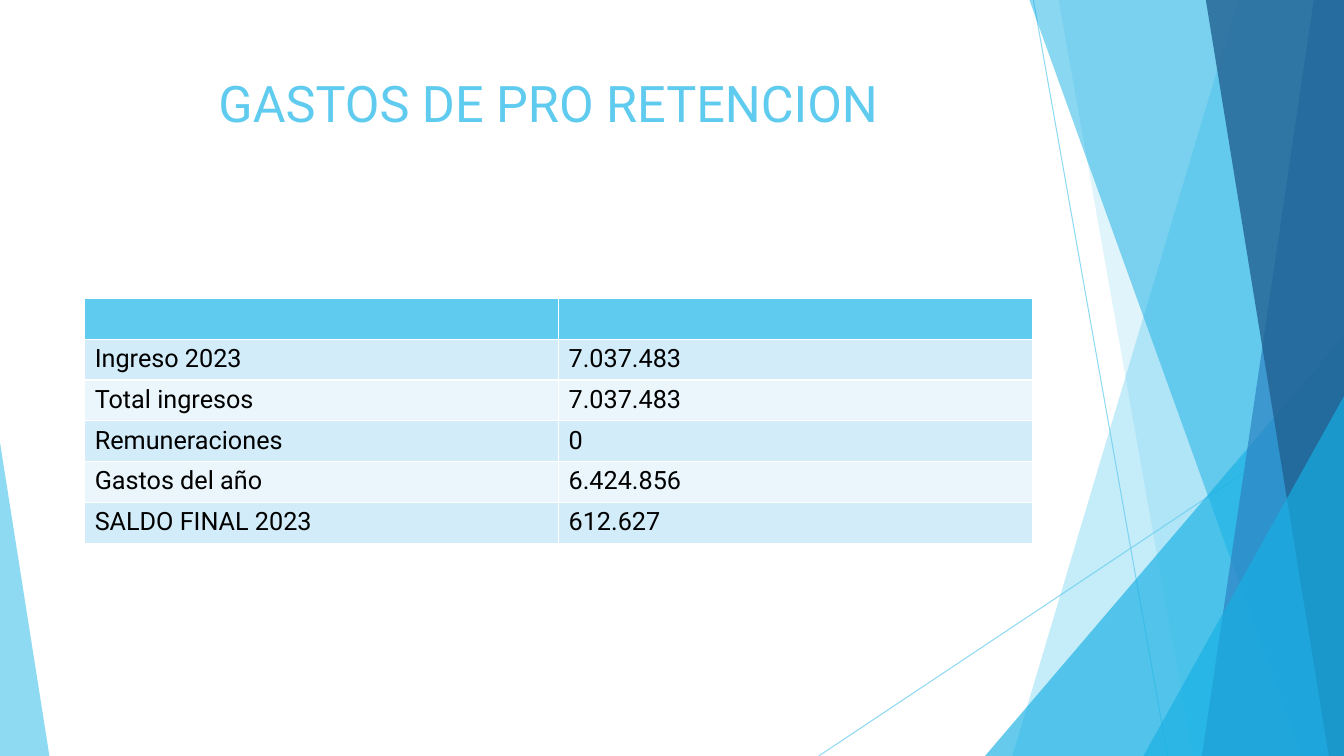
from dataclasses import dataclass

from lxml import etree
from pptx import Presentation
from pptx import util as u
from pptx.dml.color import RGBColor
from pptx.enum import shapes, text
from pptx.oxml.ns import qn

TITLE = "GASTOS DE PRO RETENCION"
ROWS = [
    ("", ""),
    ("Ingreso 2023", "7.037.483"),
    ("Total ingresos", "7.037.483"),
    ("Remuneraciones", "0"),
    ("Gastos del año", "6.424.856"),
    ("SALDO FINAL 2023", "612.627"),
]


@dataclass(frozen=True)
class Theme:
    font: str = "Roboto"
    title_size: int = 36
    body_size: int = 18
    hairline: float = 0.75
    sky: str = "5FCBEF"
    cyan: str = "17B0E4"
    blue: str = "2E83C3"
    navy: str = "226292"
    ink: str = "000000"
    bands: tuple = ("EAF6FC", "D2ECF9")


T = Theme()
W, H = 13.33, 7.5
TITLE_BOX = (0.74, 0.67, 9.4, 1.44)
TABLE_LEFT, TABLE_TOP, COLUMN, ROW = 0.84, 2.96, 4.7, 0.405

# Facets, back to front. "band": top-left x, bottom-left x, both reaching the
# right edge. "corner": left, top, width, apex (0 left, 1 right), down to the foot.
LINES = [((10.25, 0), (11.58, H)), ((W, 4.03), (8.12, H))]
FACETS = [
    ("band", (12.28, 10.04), T.sky, 36),
    ("band", (10.5, 11.83), T.sky, 20),
    ("corner", (9.77, 3.33, 3.56, 1), T.cyan, 66),
    ("band", (10.21, 12.91), T.cyan, 50),
    ("band", (13.03, 11.92), T.blue, 70),
    ("band", (11.96, 13.18), T.navy, 80),
    ("corner", (11.34, 3.93, 1.99, 1), T.cyan, 66),
    ("corner", (0, 4.39, 0.49, 0), T.sky, 70),
]


def inches(values):
    return [u.Inches(v) for v in values]


def set_alpha(sp, percent):
    """Make the shape's only colour partly transparent."""
    color = sp._element.spPr.find(".//" + qn("a:srgbClr"))
    etree.SubElement(color, qn("a:alpha"), val=str(percent * 1000))


def add_hairline(slide, start, end):
    sp = slide.shapes.add_connector(
        shapes.MSO_CONNECTOR.STRAIGHT, *inches(start + end))
    sp.line.width = u.Pt(T.hairline)
    sp.line.color.rgb = RGBColor.from_string(T.sky)
    set_alpha(sp, 70)
    etree.SubElement(sp._element.spPr, qn("a:effectLst"))


def add_facet(slide, kind, geometry, color, alpha):
    if kind == "band":
        top_x, foot_x = geometry
        points = [inches(p) for p in ((top_x, 0), (W, 0), (W, H), (foot_x, H))]
        builder = slide.shapes.build_freeform(*points[0])
        builder.add_line_segments(points[1:])
        sp = builder.convert_to_shape()
    else:
        left, top, width, apex = geometry
        sp = slide.shapes.add_shape(
            shapes.MSO_SHAPE.ISOSCELES_TRIANGLE,
            *inches((left, top, width, H - top)))
        sp.adjustments[0] = apex
    sp.shadow.inherit = False
    sp.line.fill.background()
    sp.fill.solid()
    sp.fill.fore_color.rgb = RGBColor.from_string(color)
    set_alpha(sp, alpha)


def style_text(tf, size, color):
    for p in tf.paragraphs:
        for r in p.runs:
            r.font.name = T.font
            r.font.size = u.Pt(size)
            r.font.color.rgb = RGBColor.from_string(color)


def add_title(slide):
    sp = slide.shapes.title
    sp.left, sp.top, sp.width, sp.height = inches(TITLE_BOX)
    tf = sp.text_frame
    tf.text = TITLE
    tf.vertical_anchor = text.MSO_ANCHOR.TOP
    tf.paragraphs[0].alignment = text.PP_ALIGN.CENTER
    style_text(tf, T.title_size, T.sky)


def add_expenses(slide):
    n_rows, n_cols = len(ROWS), len(ROWS[0])
    box = inches((TABLE_LEFT, TABLE_TOP, COLUMN * n_cols, ROW * n_rows))
    table = slide.shapes.add_table(n_rows, n_cols, *box).table
    for i, row in enumerate(ROWS):
        for j, value in enumerate(row):
            cell = table.cell(i, j)
            cell.fill.solid()
            cell.fill.fore_color.rgb = RGBColor.from_string(
                T.bands[i % 2] if i else T.sky)
            if value:
                cell.text_frame.text = value
                style_text(cell.text_frame, T.body_size, T.ink)


def main():
    prs = Presentation()
    prs.slide_width, prs.slide_height = inches((W, H))
    slide = prs.slides.add_slide(prs.slide_layouts[5])
    for start, end in LINES:
        add_hairline(slide, start, end)
    for facet in FACETS:
        add_facet(slide, *facet)
    add_title(slide)
    add_expenses(slide)
    prs.save("out.pptx")


if __name__ == "__main__":
    main()
